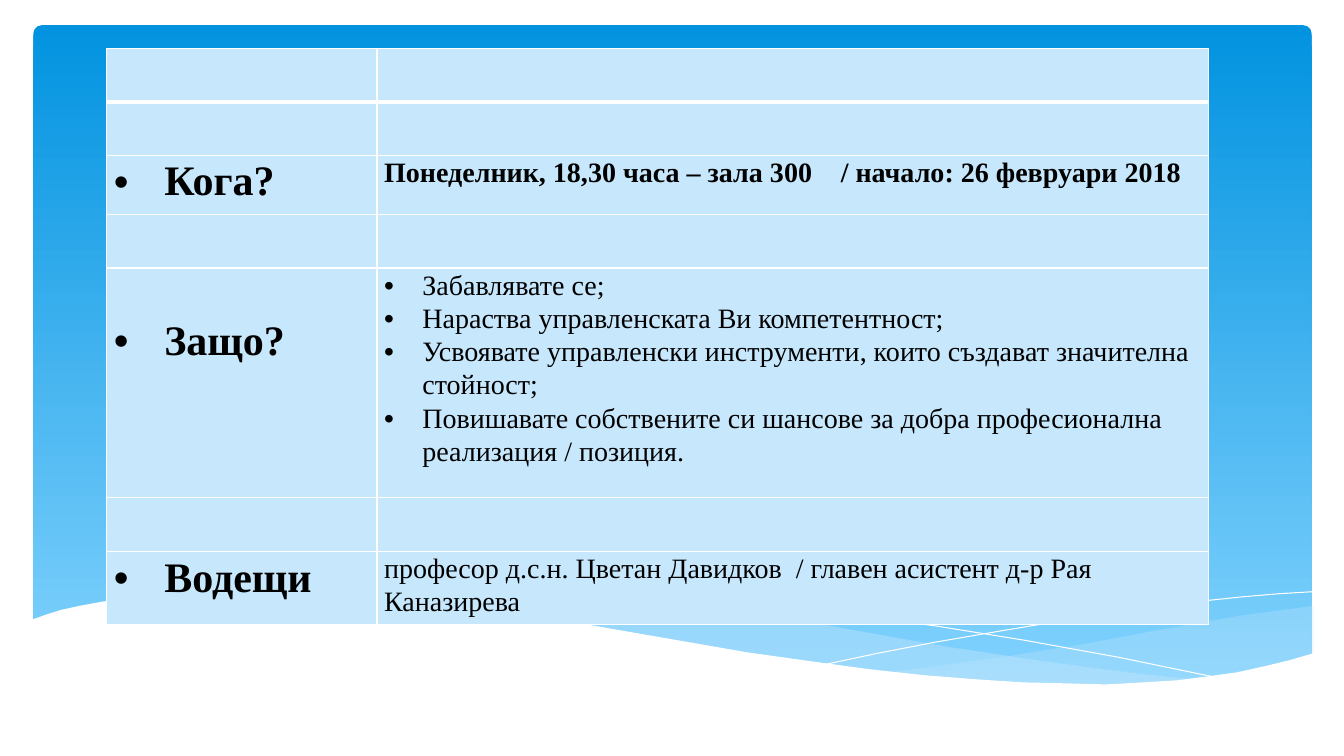
from lxml.etree import SubElement
from pptx import Presentation
from pptx.dml.color import RGBColor
from pptx.enum.shapes import MSO_SHAPE
from pptx.oxml.ns import qn
from pptx.util import Inches, Pt

DEEP_BLUE = RGBColor(0x02, 0x93, 0xE0)
SKY_BLUE = RGBColor(0x83, 0xD3, 0xFE)
PALE_BLUE = RGBColor(0xC6, 0xE7, 0xFC)
WHITE = RGBColor(0xFF, 0xFF, 0xFF)
BLACK = RGBColor(0, 0, 0)

FONT = "Times New Roman"
HEADING = {"size": Pt(30), "bold": True}
STRONG = {"size": Pt(20), "bold": True}
BODY = {"size": Pt(20), "bold": False}

COLUMN_WIDTHS = [2.68, 8.25]
ROW_HEIGHTS = [0.53, 0.53, 0.59, 0.53, 2.28, 0.53, 0.73]
REASONS = [
    "Забавлявате се;",
    "Нараства управленската Ви компетентност;",
    "Усвоявате управленски инструменти, които създават значителна стойност;",
    "Повишавате собствените си шансове за добра професионална реализация / позиция.",
]

RIGHT_WAVE = [
    (13.03, 6.01), (12.66, 6.06), (12.29, 6.11), (11.9, 6.18), (11.49, 6.25),
    (10.75, 6.39), (10.06, 6.5), (9.42, 6.59), (8.83, 6.67), (9.22, 6.71),
    (9.59, 6.74), (9.94, 6.77), (10.27, 6.79), (10.87, 6.8), (11.27, 6.79),
    (11.64, 6.76), (11.98, 6.72), (12.29, 6.67), (12.58, 6.61), (12.85, 6.54),
    (13.03, 6.49),
]
MIDDLE_WAVE = [
    (11.92, 6.75), (11.18, 6.67), (10.35, 6.56), (9.42, 6.42), (8.4, 6.24),
    (7.99, 6.16), (7.6, 6.1), (7.22, 6.04), (6.87, 6), (6.52, 5.96),
    (5.89, 5.91), (5.33, 5.88), (4.82, 5.87), (4.38, 5.89), (3.82, 5.93),
    (4.31, 5.98), (4.84, 6.04), (5.4, 6.13), (6, 6.24), (7.07, 6.42),
    (8.03, 6.57), (8.88, 6.68), (9.64, 6.76), (10.16, 6.79), (10.63, 6.8),
    (11.06, 6.8), (11.45, 6.79),
]
FALLING_CURVE = [
    (4.13, 5.97), (4.48, 5.93), (4.85, 5.9), (5.36, 5.89), (6.01, 5.89),
    (6.53, 5.92), (7.11, 5.96), (7.76, 6.02), (8.49, 6.1), (9.28, 6.21),
    (10.15, 6.35), (11.09, 6.52), (12.11, 6.73),
]
RISING_CURVE = [
    (8.19, 6.59), (8.71, 6.48), (9.28, 6.37), (9.98, 6.25), (10.76, 6.12),
    (11.56, 6), (11.95, 5.96), (12.33, 5.92), (12.69, 5.89), (13.02, 5.87),
]
WHITE_WAVE = [
    (13.03, 6.48), (12.79, 6.55), (12.54, 6.61), (12.27, 6.67), (11.98, 6.71),
    (11.67, 6.75), (11.34, 6.77), (10.97, 6.79), (10.58, 6.78), (10.15, 6.77),
    (9.69, 6.74), (9.18, 6.7), (8.63, 6.64), (8.04, 6.56), (7.4, 6.47),
    (6.71, 6.35), (5.96, 6.22), (5.21, 6.09), (4.53, 5.99), (3.9, 5.92),
    (3.33, 5.88), (2.82, 5.86), (2.35, 5.86), (1.94, 5.87), (1.58, 5.89),
    (1.27, 5.93), (1.01, 5.97), (0.79, 6.01), (0.61, 6.05), (0.48, 6.09),
    (0.31, 6.15), (0.31, 7.31), (13.03, 7.31),
]


def add_backdrop(slide):
    shape = slide.shapes.add_shape(
        MSO_SHAPE.ROUNDED_RECTANGLE, Inches(0.33), Inches(0.25), Inches(12.68), Inches(6.6))
    shape.adjustments[0] = 0.013
    shape.shadow.inherit = False
    shape.line.fill.background()
    shape.fill.gradient()
    shape.fill.gradient_angle = 270
    for stop, color in zip(shape.fill.gradient_stops, (DEEP_BLUE, SKY_BLUE)):
        stop.color.rgb = color


def add_outline(slide, points, close):
    start, *rest = [(Inches(x), Inches(y)) for x, y in points]
    builder = slide.shapes.build_freeform(*start)
    builder.add_line_segments(rest, close=close)
    shape = builder.convert_to_shape()
    shape.shadow.inherit = False
    return shape


def add_wave(slide, points, color, opacity=100):
    shape = add_outline(slide, points, True)
    shape.line.fill.background()
    shape.fill.solid()
    shape.fill.fore_color.rgb = color
    if opacity < 100:
        color_element = shape.fill._xPr.find(qn("a:solidFill"))[0]
        SubElement(color_element, qn("a:alpha"), val=str(opacity * 1000))


def add_curve(slide, points):
    shape = add_outline(slide, points, False)
    shape.fill.background()
    shape.line.color.rgb = WHITE
    shape.line.width = Pt(0)


def set_border(cell, side, width):
    line = SubElement(cell._tc.get_or_add_tcPr(), qn(f"a:ln{side}"), w=str(Pt(width)))
    fill = SubElement(line, qn("a:solidFill"))
    SubElement(fill, qn("a:srgbClr"), val=str(WHITE))


def add_table(slide):
    table = slide.shapes.add_table(
        len(ROW_HEIGHTS), len(COLUMN_WIDTHS), Inches(1.06), Inches(0.48),
        Inches(sum(COLUMN_WIDTHS)), Inches(sum(ROW_HEIGHTS))).table
    table.first_row = table.horz_banding = False
    for column, width in zip(table.columns, COLUMN_WIDTHS):
        column.width = Inches(width)
    for index, (row, height) in enumerate(zip(table.rows, ROW_HEIGHTS)):
        row.height = Inches(height)
        widths = {"L": 1, "R": 1, "T": 3 if index == 1 else 1, "B": 3 if index == 0 else 1}
        for cell in row.cells:
            for side, width in widths.items():
                set_border(cell, side, width)
            cell.fill.solid()
            cell.fill.fore_color.rgb = PALE_BLUE
    return table


def write_cell(cell, texts, font_format, indent=0, top=0, tab=0):
    cell.margin_left = cell.margin_right = Inches(0.07)
    cell.margin_top, cell.margin_bottom = Inches(top), 0
    for index, text in enumerate(texts):
        frame = cell.text_frame
        paragraph = frame.add_paragraph() if index else frame.paragraphs[0]
        paragraph.line_spacing = 1.07
        run = paragraph.add_run()
        run.text = text
        run.font.name = FONT
        run.font.color.rgb = BLACK
        for name, value in font_format.items():
            setattr(run.font, name, value)
        properties = paragraph._p.get_or_add_pPr()
        if indent:
            properties.set("marL", str(Inches(indent)))
            properties.set("indent", str(-Inches(indent)))
            SubElement(properties, qn("a:buFont"), typeface="Arial")
            SubElement(properties, qn("a:buChar"), char="•")
        if tab:
            tabs = SubElement(properties, qn("a:tabLst"))
            SubElement(tabs, qn("a:tab"), pos=str(Inches(tab)), algn="l")


def main():
    presentation = Presentation()
    presentation.slide_width = Inches(13.33)
    presentation.slide_height = Inches(7.5)
    slide = presentation.slides.add_slide(presentation.slide_layouts[6])

    add_backdrop(slide)
    add_wave(slide, RIGHT_WAVE, PALE_BLUE, 29)
    add_wave(slide, MIDDLE_WAVE, PALE_BLUE, 40)
    add_curve(slide, FALLING_CURVE)
    add_curve(slide, RISING_CURVE)
    add_wave(slide, WHITE_WAVE, WHITE)

    table = add_table(slide)
    for row, heading, top in ((2, "Кога?", 0), (4, "Защо?", 0.46), (6, "Водещи", 0)):
        write_cell(table.cell(row, 0), [heading], HEADING, indent=0.5, top=top)
    write_cell(table.cell(2, 1), ["Понеделник, 18,30 часа – зала 300\t/ начало: 26 февруари 2018"],
               STRONG, tab=4.53)
    write_cell(table.cell(4, 1), REASONS, BODY, indent=0.38)
    write_cell(table.cell(6, 1),
               ["професор д.с.н. Цветан Давидков  / главен асистент д-р Рая Каназирева"], BODY)
    presentation.save("out.pptx")


if __name__ == "__main__":
    main()
